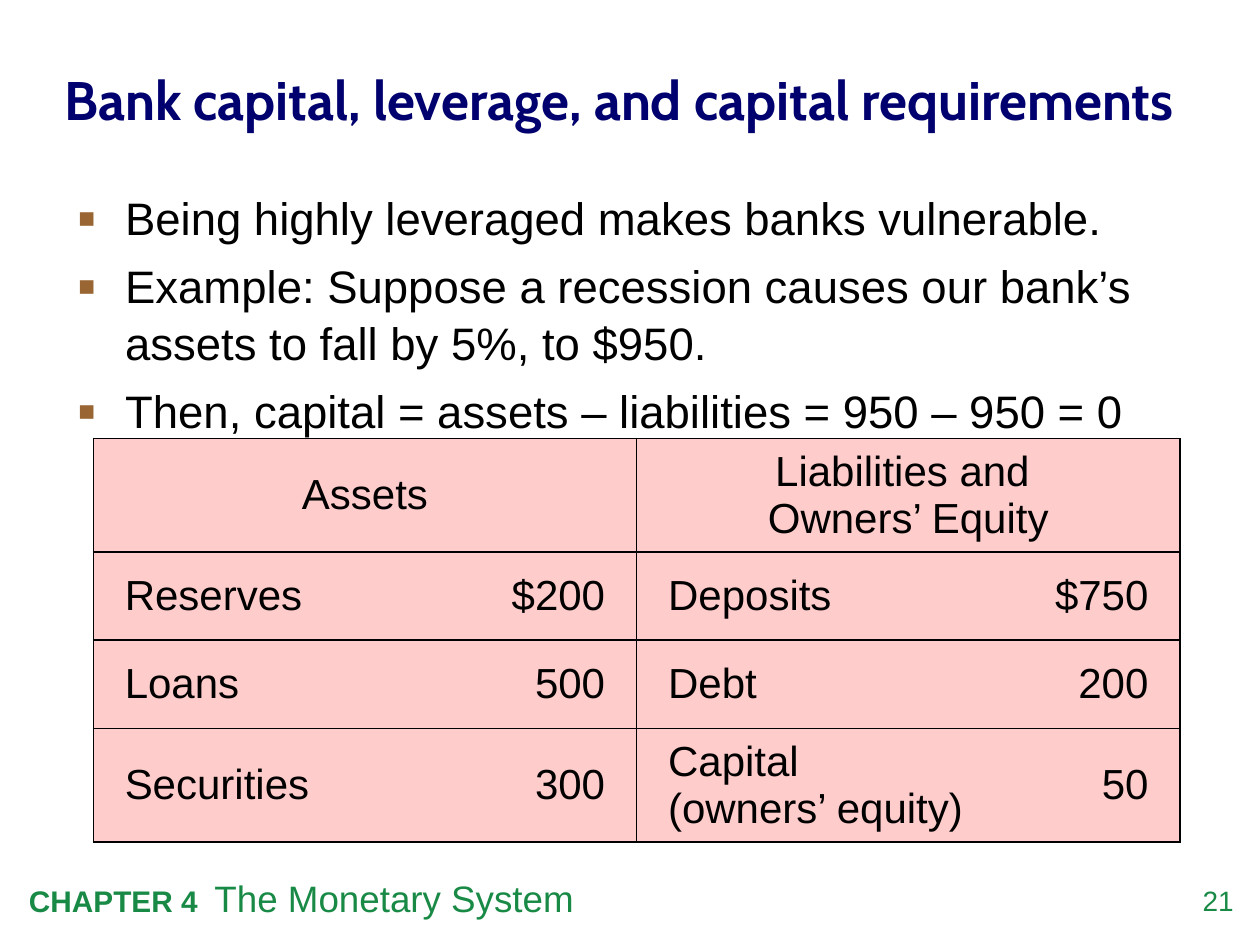
from lxml.etree import SubElement
from pptx import Presentation
from pptx.dml.color import RGBColor
from pptx.enum.text import MSO_ANCHOR as Anchor, PP_ALIGN as Align
from pptx.oxml import parse_xml
from pptx.oxml.ns import nsdecls, qn
from pptx.util import Pt

COLORS = {
    "title": "00006E",
    "text": "000000",
    "bullet": "996633",
    "footer": "198A46",
    "cell": "FFCCCC",
    "border": "000000",
}


class SlideBuilder:
    font = "Arial"
    title_font = "Cabin"
    body_size = 26
    table_size = 24

    def __init__(self, slide):
        self.slide = slide

    def format_run(self, run, size, color, bold=False, font=None):
        run.font.name = font or self.font
        run.font.size = Pt(size)
        run.font.bold = bold
        run.font.color.rgb = RGBColor.from_string(COLORS[color])

    def text_box(self, left, top, width, height, text="", inset=True):
        shape = self.slide.shapes.add_textbox(Pt(left), Pt(top), Pt(width), Pt(height))
        frame = shape.text_frame
        frame.word_wrap = True
        if not inset:
            frame.margin_left = frame.margin_right = 0
            frame.margin_top = frame.margin_bottom = 0
        frame.text = text
        return frame

    def title(self, text, *box):
        frame = self.text_box(*box, text=text, inset=False)
        frame.vertical_anchor = Anchor.MIDDLE
        paragraph = frame.paragraphs[0]
        paragraph.line_spacing = 1.05
        self.format_run(paragraph.runs[0], 31, "title", True, self.title_font)

    def bullets(self, lines, *box):
        frame = self.text_box(*box, text="\n".join(lines))
        for paragraph in frame.paragraphs:
            paragraph.line_spacing = 1.05
            paragraph.space_before = Pt(6)
            self.format_run(paragraph.runs[0], self.body_size, "text")
            properties = paragraph._p.get_or_add_pPr()
            properties.set("marL", str(Pt(27)))
            properties.set("indent", str(Pt(-27)))
            color = SubElement(properties, qn("a:buClr"))
            SubElement(color, qn("a:srgbClr"), val=COLORS["bullet"])
            SubElement(properties, qn("a:buSzPct"), val="120000")
            SubElement(properties, qn("a:buFont"), typeface=self.font)
            SubElement(properties, qn("a:buChar"), char="▪")

    def footer(self, chapter, name, *box):
        paragraph = self.text_box(*box).paragraphs[0]
        for text, size, bold in ((chapter, 17, True), (name, 21, False)):
            run = paragraph.add_run()
            run.text = text
            self.format_run(run, size, "footer", bold)

    def page_number(self, number, *box):
        paragraph = self.text_box(*box, text=number, inset=False).paragraphs[0]
        paragraph.alignment = Align.RIGHT
        self.format_run(paragraph.runs[0], 16, "footer")

    def borders(self, cell, sides):
        properties = cell._tc.get_or_add_tcPr()
        for index, side in enumerate("LRTB"):
            fill = "<a:noFill/>"
            if side in sides:
                fill = f'<a:solidFill><a:srgbClr val="{COLORS["border"]}"/></a:solidFill>'
            line = parse_xml(f'<a:ln{side} {nsdecls("a")} w="{Pt(1)}">{fill}</a:ln{side}>')
            properties.insert(index, line)

    def cell(self, cell, text, align, margin, sides):
        cell.fill.solid()
        cell.fill.fore_color.rgb = RGBColor.from_string(COLORS["cell"])
        cell.vertical_anchor = Anchor.MIDDLE
        cell.margin_left = cell.margin_right = Pt(margin)
        cell.margin_top = cell.margin_bottom = Pt(3.6)
        cell.text_frame.text = text
        for paragraph in cell.text_frame.paragraphs:
            paragraph.alignment = align
            for run in paragraph.runs:
                self.format_run(run, self.table_size, "text")
        self.borders(cell, sides)

    def balance_sheet(self, headers, rows, left, top, widths, heights):
        table = self.slide.shapes.add_table(
            len(heights), len(widths), Pt(left), Pt(top), Pt(sum(widths)), Pt(sum(heights))
        ).table
        table.first_row = table.horz_banding = False
        for column, width in zip(table.columns, widths):
            column.width = Pt(width)
        for row, height in zip(table.rows, heights):
            row.height = Pt(height)

        # Each header spans a label column and an amount column
        for index, header in enumerate(headers):
            first, second = table.cell(0, 2 * index), table.cell(0, 2 * index + 1)
            self.cell(second, "", Align.CENTER, 7.2, "RTB")
            first.merge(second)
            self.cell(first, header, Align.CENTER, 7.2, "LRTB")

        # No line between a label and its amount
        for row_index, row in enumerate(rows, start=1):
            for column_index, text in enumerate(row):
                is_amount = column_index % 2 == 1
                align = Align.RIGHT if is_amount else Align.LEFT
                sides = "RTB" if is_amount else "LTB"
                self.cell(table.cell(row_index, column_index), text, align, 18, sides)


def main():
    presentation = Presentation()
    presentation.slide_width, presentation.slide_height = Pt(720), Pt(540)
    builder = SlideBuilder(presentation.slides.add_slide(presentation.slide_layouts[6]))

    # Footer
    builder.page_number("21", 665.3, 504.7, 39.6, 23)
    builder.footer("CHAPTER 4  ", "The Monetary System", 9.4, 496.8, 589, 32.4)

    # Title and bullets
    builder.title("Bank capital, leverage, and capital requirements", 36.7, 18.7, 649.4, 74.2)
    builder.bullets(
        [
            "Being highly leveraged makes banks vulnerable.",
            "Example: Suppose a recession causes our bank’s assets to fall by 5%, to $950.",
            "Then, capital = assets – liabilities = 950 – 950 = 0",
        ],
        37.4, 103.7, 646.6, 378.7,
    )

    # Balance sheet; \v is a line break inside a paragraph
    builder.balance_sheet(
        ["Assets", "Liabilities and \vOwners’ Equity"],
        [
            ["Reserves", "$200", "Deposits", "$750"],
            ["Loans", "500", "Debt", "200"],
            ["Securities", "300", "Capital \v(owners’ equity)", "50"],
        ],
        53.3, 250.6,
        widths=[202.5, 108, 207.5, 103],
        heights=[64.8, 50.4, 50.4, 64.8],
    )

    presentation.save("out.pptx")


if __name__ == "__main__":
    main()
